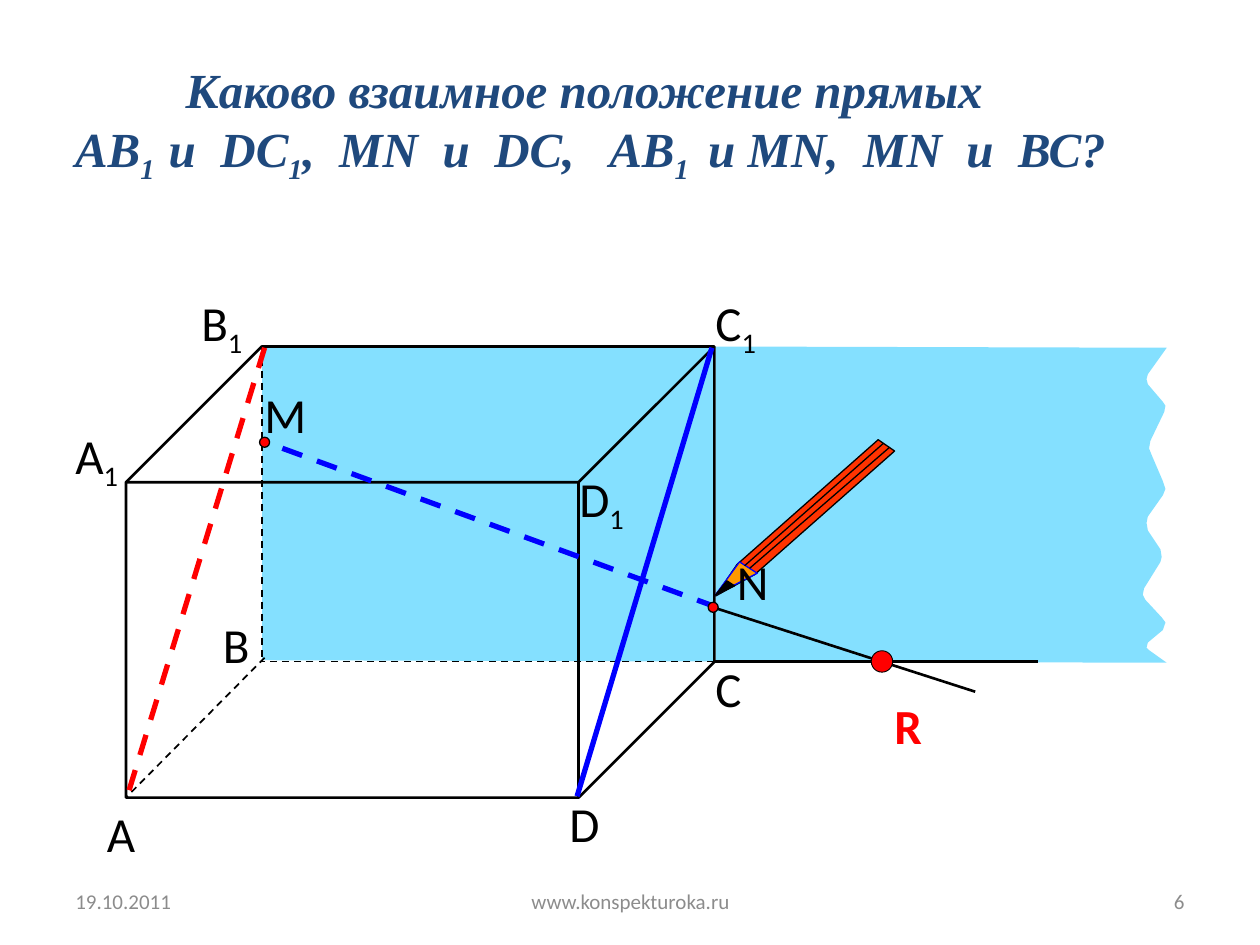
from dataclasses import dataclass

from lxml import etree
from pptx import Presentation
from pptx.dml.color import RGBColor
from pptx.enum import dml, shapes, text
from pptx.oxml.ns import qn
from pptx.util import Inches, Pt


@dataclass(frozen=True)
class Theme:
    ink: str = "000000"
    title: str = "1F497D"
    plane: str = "33CCFF"
    red: str = "FF0000"
    blue: str = "0000FF"
    pencil: str = "FF3300"
    wood: str = "FF9900"
    muted: str = "8C8C8C"
    body_font: str = "Calibri"
    title_font: str = "Times New Roman"
    large: int = 28
    small: int = 12


class Sheet:
    """Holds the theme and the current slide."""

    def __init__(self, prs, theme):
        self.theme = theme
        self.s = prs.slides.add_slide(prs.slide_layouts[5])

    def _line(self, line, color, width, dashed=False):
        line.color.rgb = RGBColor.from_string(color)
        line.width = Pt(width)
        if dashed:
            line.dash_style = dml.MSO_LINE.DASH

    def _paint(self, sp, fill, color, width, alpha=None):
        sp.shadow.inherit = False
        if fill:
            sp.fill.solid()
            sp.fill.fore_color.rgb = RGBColor.from_string(fill)
        else:
            sp.fill.background()
        if alpha:
            clr = sp.fill._xPr.find(qn("a:solidFill"))[0]
            etree.SubElement(clr, qn("a:alpha")).set("val", str(alpha * 1000))
        if color:
            self._line(sp.line, color, width)
        else:
            sp.line.fill.background()

    def _write(self, p, content, color, fmt):
        """Every second part between bars is a subscript."""
        for i, part in enumerate(content.split("|")):
            if not part:
                continue
            r = p.add_run()
            r.text = part
            for name, value in fmt.items():
                setattr(r.font, name, value)
            r.font.color.rgb = RGBColor.from_string(color)
            if i % 2:
                r._r.get_or_add_rPr().set("baseline", "-25000")

    def title(self, box, lines):
        sp = self.s.shapes.title
        sp.left, sp.top, sp.width, sp.height = map(Inches, box)
        tf = sp.text_frame
        frame = {"word_wrap": False, "auto_size": text.MSO_AUTO_SIZE.NONE,
                 "vertical_anchor": text.MSO_ANCHOR.TOP}
        for name, value in frame.items():
            setattr(tf, name, value)
        fmt = {"name": self.theme.title_font, "size": Pt(self.theme.large),
               "bold": True, "italic": True}
        for i, content in enumerate(lines):
            p = tf.add_paragraph() if i else tf.paragraphs[0]
            p.alignment = text.PP_ALIGN.CENTER
            self._write(p, content, self.theme.title, fmt)

    def label(self, content, box, color=None, size=None, bold=False, wrap=False,
              align=text.PP_ALIGN.LEFT, anchor=text.MSO_ANCHOR.TOP):
        tf = self.s.shapes.add_textbox(*map(Inches, box)).text_frame
        tf.word_wrap = wrap
        tf.vertical_anchor = anchor
        p = tf.paragraphs[0]
        p.alignment = align
        fmt = {"name": self.theme.body_font, "bold": bold,
               "size": Pt(size or self.theme.large)}
        self._write(p, content, color or self.theme.ink, fmt)

    def segment(self, start, end, color=None, width=1.0, dashed=False):
        cn = self.s.shapes.add_connector(
            shapes.MSO_CONNECTOR.STRAIGHT, *map(Inches, start + end))
        self._line(cn.line, color or self.theme.ink, width, dashed)
        etree.SubElement(cn._element.spPr, qn("a:effectLst"))

    def polygon(self, points, fill, color=None, width=0.75, alpha=None):
        pts = [(Inches(x), Inches(y)) for x, y in points]
        fb = self.s.shapes.build_freeform(*pts[0], scale=1.0)
        fb.add_line_segments(pts[1:], close=True)
        self._paint(fb.convert_to_shape(), fill, color, width, alpha)

    def cube(self, box, depth):
        sp = self.s.shapes.add_shape(shapes.MSO_SHAPE.CUBE, *map(Inches, box))
        sp.adjustments[0] = depth
        self._paint(sp, None, self.theme.ink, 1.5)

    def dot(self, center, d, width):
        x, y = center
        sp = self.s.shapes.add_shape(
            shapes.MSO_SHAPE.OVAL, *map(Inches, (x - d / 2, y - d / 2, d, d)))
        self._paint(sp, self.theme.red, self.theme.ink, width)


def main():
    t = Theme()
    prs = Presentation()
    prs.slide_width, prs.slide_height = Inches(10), Inches(7.5)
    sh = Sheet(prs, t)

    sh.title((0.36, 0.42, 8.65, 1.04), [
        "Каково взаимное положение прямых ",
        "AB|1  |и  DC|1|,  МN  и  DC,   AB|1 | и МN,  MN  и  ВС?"])

    # Plane of the back face, with its torn right edge
    torn_edge = [
        (9.26, 2.76), (9.11, 2.97), (9.1, 3.01), (9.11, 3.05), (9.23, 3.19),
        (9.25, 3.22), (9.24, 3.27), (9.13, 3.5), (9.12, 3.56), (9.14, 3.61),
        (9.23, 3.82), (9.25, 3.88), (9.23, 3.93), (9.11, 4.1), (9.1, 4.15),
        (9.11, 4.21), (9.21, 4.36), (9.22, 4.42), (9.21, 4.46), (9.08, 4.67),
        (9.07, 4.72), (9.09, 4.76), (9.22, 4.9), (9.25, 4.94), (9.23, 5),
        (9.11, 5.1), (9.1, 5.14), (9.12, 5.16), (9.26, 5.26)]
    sh.polygon([(5.68, 2.75), *torn_edge, (5.68, 5.25)], t.plane, alpha=60)
    sh.polygon([(2.08, 2.74), (5.67, 2.75), (5.67, 5.25), (2.08, 5.24)],
               t.plane, alpha=60)

    # Box and its hidden edges
    sh.cube((1, 2.75, 4.67, 3.58), 0.301)
    for start, end in [((5.67, 5.25), (2.07, 5.25)),
                       ((2.08, 2.75), (2.08, 5.25)),
                       ((2.1, 5.22), (1, 6.33))]:
        sh.segment(start, end, dashed=True)

    # Vertex names
    for name, x, y, w, wrap in [
            ("А", 0.75, 6.33, 0.46, False), ("D", 4.42, 6.25, 0.48, False),
            ("С", 5.58, 5.18, 0.48, False), ("В", 1.67, 4.83, 0.48, True),
            ("B|1", 1.5, 2.27, 0.83, True), ("С|1", 5.58, 2.27, 0.63, False),
            ("D|1", 4.5, 3.67, 0.63, False), ("А|1", 0.5, 3.33, 0.61, False)]:
        sh.label(name, (x, y, w, 0.57), wrap=wrap)

    # Pencil: body, wood, lead, grooves
    sh.polygon([(6.97, 3.49), (7.1, 3.58), (5.99, 4.56), (5.68, 4.73),
                (5.85, 4.48)], t.pencil, t.ink)
    sh.polygon([(5.68, 4.72), (6.01, 4.55), (5.87, 4.46)], t.wood, t.blue)
    sh.polygon([(5.83, 4.65), (5.77, 4.61), (5.68, 4.72)], t.ink, t.ink)
    sh.segment((7.01, 3.52), (5.91, 4.49), width=0.75)
    sh.segment((7.06, 3.55), (5.95, 4.51), width=0.75)

    # Extended lines meeting at R
    sh.segment((5.67, 5.25), (8.24, 5.25), width=1.5)
    sh.segment((7.74, 5.49), (5.69, 4.83), width=1.5)
    sh.dot((7, 5.25), 0.17, 0.5)
    sh.label("R", (7, 5.47, 0.83, 0.57), t.red, bold=True, wrap=True)

    # Face diagonals
    sh.segment((2.1, 2.76), (1.01, 6.32), t.red, 3, dashed=True)
    sh.segment((5.65, 2.76), (4.58, 6.32), t.blue, 3)

    # Segment MN
    sh.segment((5.69, 4.82), (2.11, 3.51), t.blue, 3, dashed=True)
    sh.label("N", (5.75, 4.33, 0.48, 0.57))
    sh.label("M", (2, 3, 0.53, 0.57))
    for center in [(5.66, 4.82), (2.1, 3.51)]:
        sh.dot(center, 0.08, 0.75)

    # Footer
    for content, x, w, align in [
            ("19.10.2011", 0.5, 2.33, text.PP_ALIGN.LEFT),
            ("6", 7.17, 2.33, text.PP_ALIGN.RIGHT),
            ("www.konspekturoka.ru", 3.42, 3.17, text.PP_ALIGN.CENTER)]:
        sh.label(content, (x, 6.95, w, 0.4), t.muted, t.small, wrap=True,
                 align=align, anchor=text.MSO_ANCHOR.MIDDLE)

    prs.save("out.pptx")


if __name__ == "__main__":
    main()
